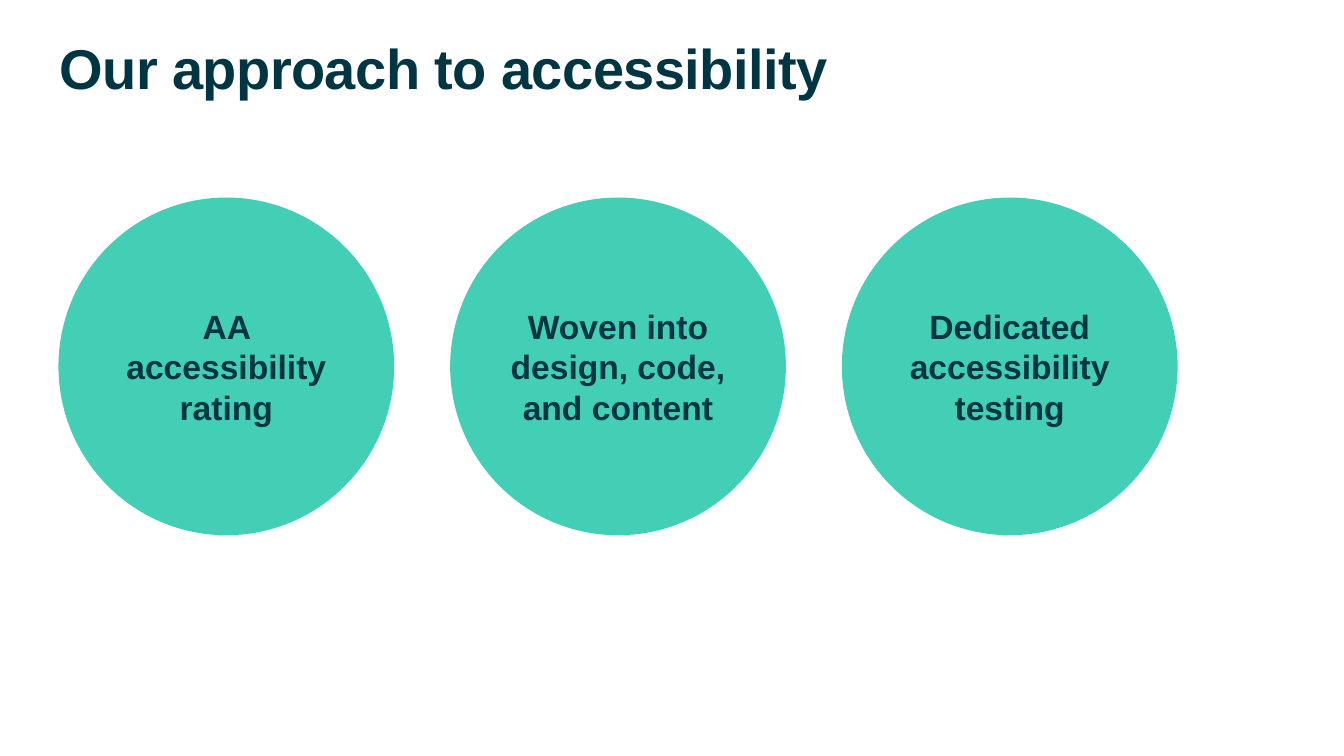
from dataclasses import dataclass

import pptx
import pptx.dml.color
import pptx.enum.shapes
import pptx.enum.text
import pptx.util

Inches = pptx.util.Inches
Align = pptx.enum.text.PP_ALIGN
Anchor = pptx.enum.text.MSO_ANCHOR

NAVY = pptx.dml.color.RGBColor(0x00, 0x36, 0x43)
TEAL = pptx.dml.color.RGBColor(0x43, 0xCF, 0xB5)
WHITE = pptx.dml.color.RGBColor(0xFF, 0xFF, 0xFF)
FONT = "Arial"

FIRST_LEFT, CIRCLE_TOP = 0.58, 1.96
CIRCLE_WIDTH, CIRCLE_HEIGHT = 3.33, 3.35
CIRCLE_STEP = 3.885


@dataclass(frozen=True)
class Principle:
    text: str
    column: int

    @property
    def left(self) -> float:
        return FIRST_LEFT + self.column * CIRCLE_STEP


PRINCIPLES = [
    Principle("AA accessibility rating", 0),
    Principle("Woven into design, code, and content", 1),
    Principle("Dedicated accessibility testing", 2),
]


def write_text(frame, text: str, *, size: float, align=Align.LEFT,
               anchor=Anchor.TOP, line_spacing: float = 1.0,
               letter_spacing: float = 0) -> None:
    """Fill a text frame with one bold paragraph."""
    frame.word_wrap = True
    frame.vertical_anchor = anchor
    paragraph = frame.paragraphs[0]
    paragraph.alignment = align
    paragraph.line_spacing = line_spacing
    run = paragraph.add_run()
    run.text = text
    run.font.name = FONT
    run.font.size = pptx.util.Pt(size)
    run.font.bold = True
    run.font.color.rgb = NAVY
    if letter_spacing:
        run._r.get_or_add_rPr().set("spc", str(round(letter_spacing * 100)))


def add_title(slide, text: str) -> None:
    title = slide.shapes.add_textbox(
        Inches(0.59), Inches(0.41), Inches(11.22), Inches(0.79))
    frame = title.text_frame
    frame.margin_left = frame.margin_right = 0
    frame.margin_top = frame.margin_bottom = 0
    write_text(frame, text, size=40, line_spacing=0.9, letter_spacing=-0.4)


def add_circle(slide, principle: Principle) -> None:
    circle = slide.shapes.add_shape(
        pptx.enum.shapes.MSO_SHAPE.OVAL,
        Inches(principle.left), Inches(CIRCLE_TOP),
        Inches(CIRCLE_WIDTH), Inches(CIRCLE_HEIGHT))
    circle.shadow.inherit = False
    circle.fill.solid()
    circle.fill.fore_color.rgb = TEAL
    circle.line.fill.background()
    write_text(circle.text_frame, principle.text, size=24,
               align=Align.CENTER, anchor=Anchor.MIDDLE)


def main() -> None:
    deck = pptx.Presentation()
    deck.slide_width, deck.slide_height = Inches(13.33), Inches(7.5)
    slide = deck.slides.add_slide(deck.slide_layouts[6])
    slide.background.fill.solid()
    slide.background.fill.fore_color.rgb = WHITE

    # Heading
    add_title(slide, "Our approach to accessibility")

    # Row of principles
    for principle in PRINCIPLES:
        add_circle(slide, principle)

    deck.save("out.pptx")


if __name__ == "__main__":
    main()
